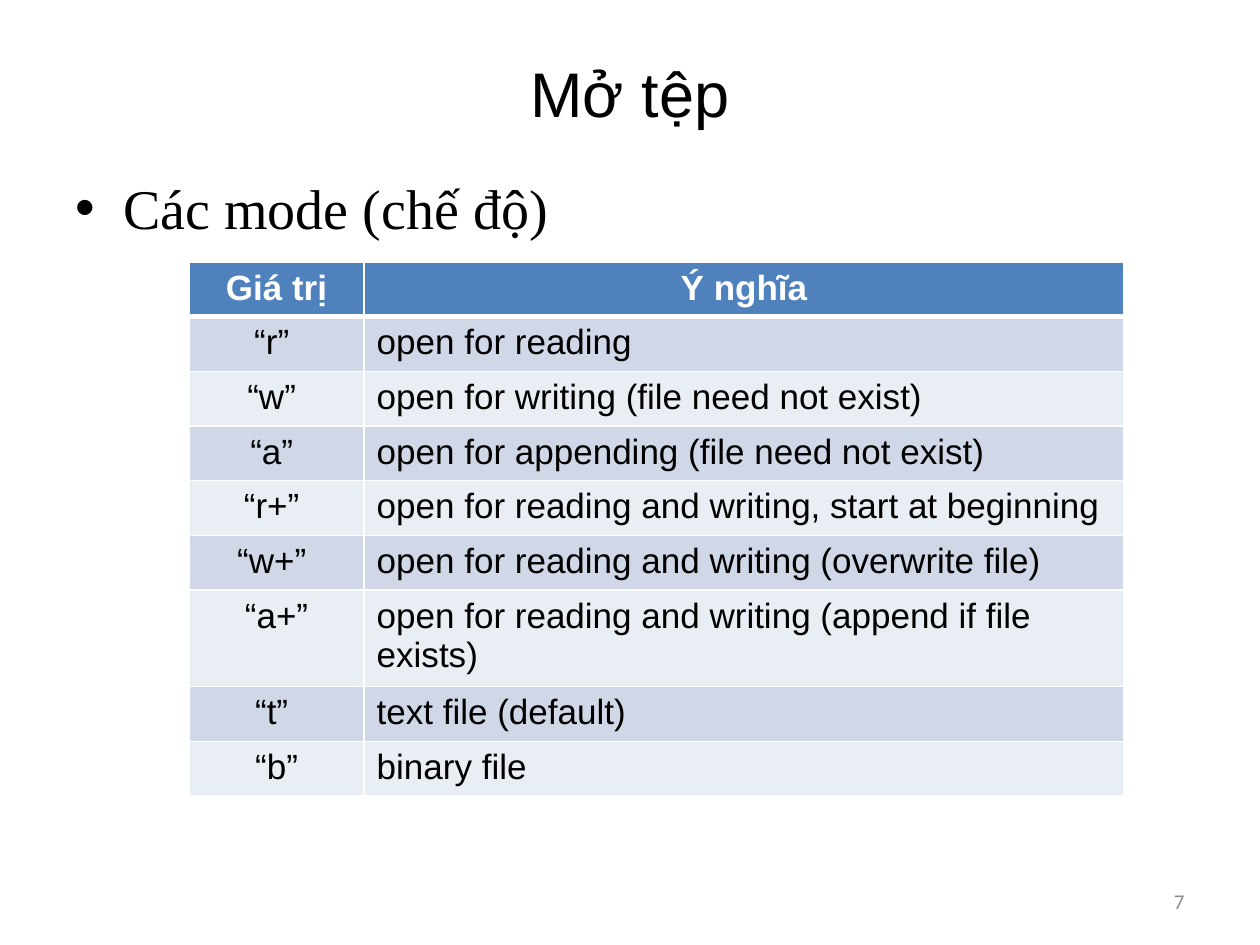
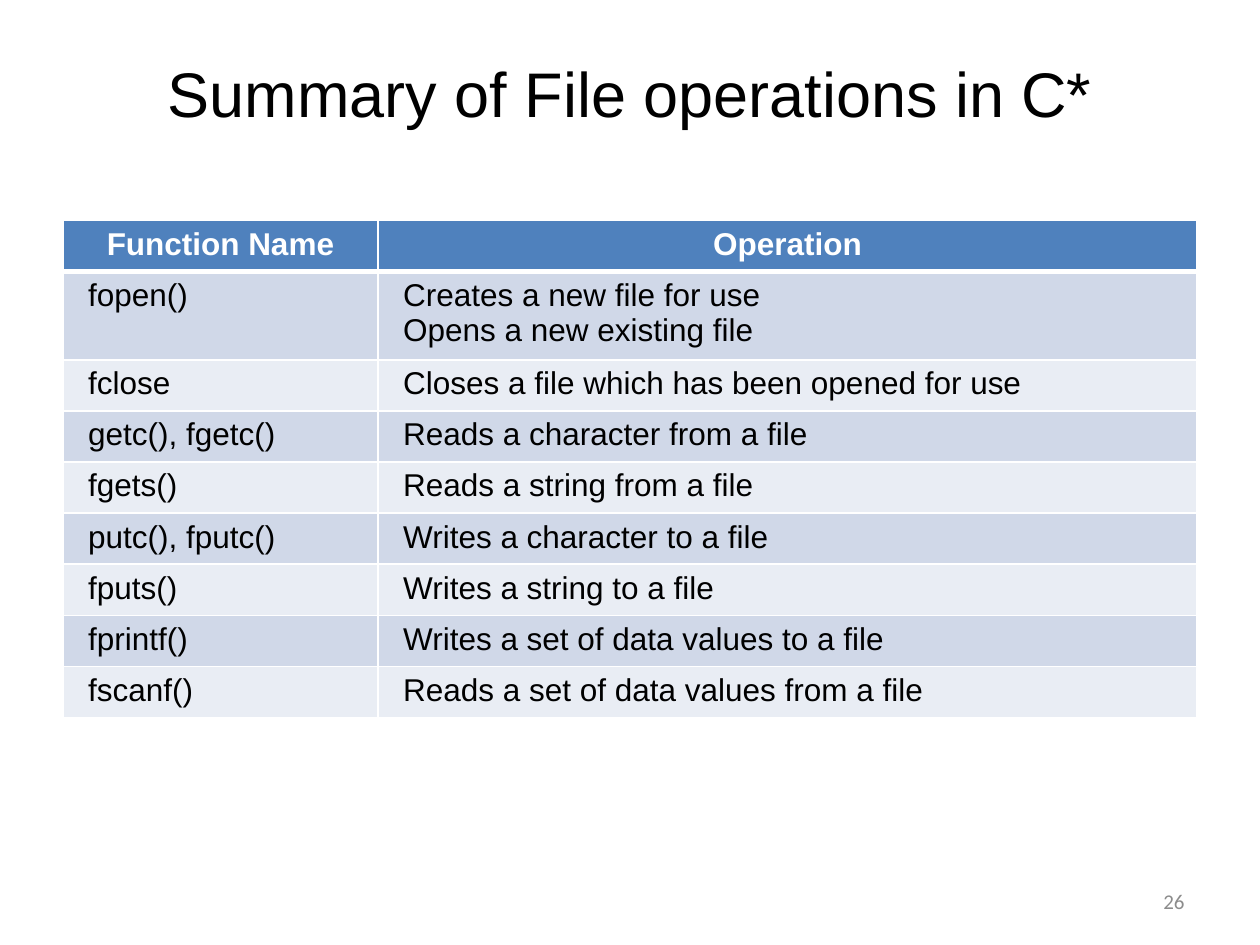
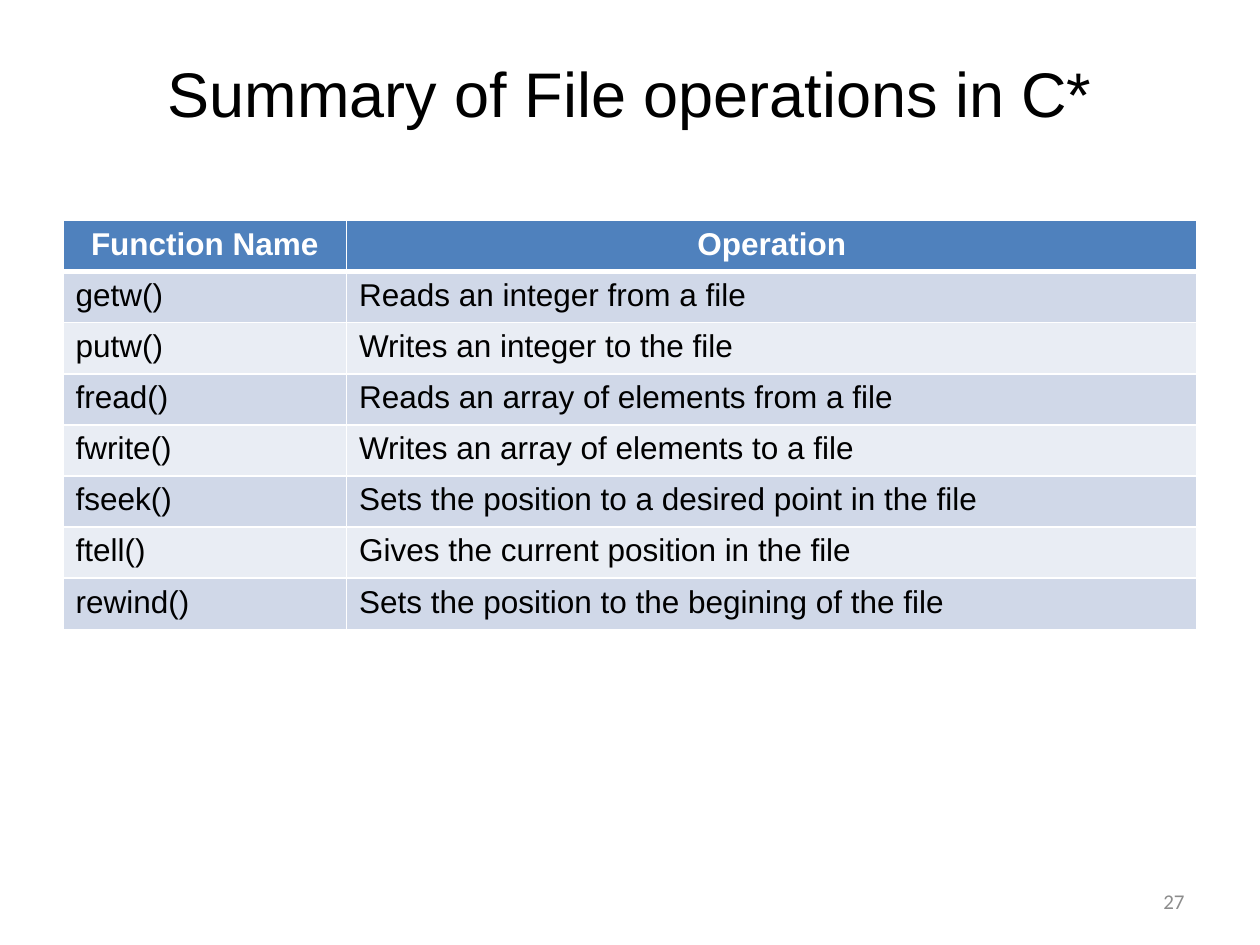
from lxml.etree import SubElement
from pptx import Presentation
from pptx.dml.color import RGBColor
from pptx.enum.text import MSO_ANCHOR, PP_ALIGN
from pptx.oxml.ns import qn
from pptx.util import Inches, Pt

# Content
SUMMARY_TITLE = "Summary of File operations in C*"
SUMMARY_HEADER = ("Function Name", "Operation")

MODES = [
    ("Giá trị", "Ý nghĩa"),
    ("“r” ", "open for reading"),
    ("“w” ", "open for writing (file need not exist)"),
    ("“a” ", "open for appending (file need not exist)"),
    ("“r+” ", "open for reading and writing, start at beginning"),
    ("“w+” ", "open for reading and writing (overwrite file)"),
    ("“a+”", "open for reading and writing (append if file exists)"),
    ("“t” ", "text file (default)"),
    ("“b”", "binary file"),
]
BASIC_FUNCTIONS = [
    SUMMARY_HEADER,
    ("fopen()", "Creates a new file for use\vOpens a new existing file"),
    ("fclose", "Closes a file which has been opened for use"),
    ("getc(), fgetc()", "Reads a character from a file"),
    ("fgets()", "Reads a string from a file"),
    ("putc(), fputc()", "Writes a character to a file"),
    ("fputs()", "Writes a string to a file"),
    ("fprintf()", "Writes a set of data values to a file"),
    ("fscanf()", "Reads a set of data values from a file"),
]
OTHER_FUNCTIONS = [
    SUMMARY_HEADER,
    ("getw()", "Reads an integer from a file"),
    ("putw()", "Writes an integer to the file"),
    ("fread()", "Reads an array of elements from a file"),
    ("fwrite()", "Writes an array of elements to a file"),
    ("fseek()", "Sets the position to a desired point in the file"),
    ("ftell()", "Gives the current position in the file"),
    ("rewind()", "Sets the position to the begining of the file"),
]
SLIDES = [
    {"title": "Mở tệp", "number": 7, "bullet": "Các mode (chế độ)",
     "rows": MODES, "corner": (1.5, 2.08), "widths": (1.39, 6.03),
     "size": 20, "margin": 0.1, "key_align": PP_ALIGN.CENTER},
    {"title": SUMMARY_TITLE, "number": 26,
     "rows": BASIC_FUNCTIONS, "corner": (0.5, 1.75), "widths": (2.5, 6.5),
     "size": 18, "margin": 0.2, "key_align": PP_ALIGN.LEFT},
    {"title": SUMMARY_TITLE, "number": 27,
     "rows": OTHER_FUNCTIONS, "corner": (0.5, 1.75), "widths": (2.25, 6.75),
     "size": 18, "margin": 0.1, "key_align": PP_ALIGN.LEFT},
]

# Shared style
BLACK, WHITE, GRAY = "000000", "FFFFFF", "8C8C8C"
HEADER_FILL = "4F81BD"
BAND_FILLS = ("E9EDF4", "D0D8E8")
ROW_HEIGHT = Inches(3.65 / 9)
TITLE_AREA = (0.5, 0.3, 9, 0.87)
BODY_AREA = (0.5, 1.33, 9, 5.5)
NUMBER_AREA = (7.17, 6.95, 2.33, 0.4)


def color(code):
    return RGBColor.from_string(code)


def style_text(frame, size, font, code, align, bold=False):
    for para in frame.paragraphs:
        para.alignment = align
        for span in para.runs:
            span.font.size = Pt(size)
            span.font.name = font
            span.font.bold = bold
            span.font.color.rgb = color(code)


def add_text(page, area, text, size, font, code, align, anchor=MSO_ANCHOR.MIDDLE):
    box = page.shapes.add_textbox(*map(Inches, area))
    frame = box.text_frame
    frame.word_wrap = True
    frame.vertical_anchor = anchor
    frame.text = text
    style_text(frame, size, font, code, align)
    return frame.paragraphs[0]


def add_bullet(para):
    properties = para._p.get_or_add_pPr()
    properties.set("marL", str(Inches(0.38)))
    properties.set("indent", str(Inches(-0.38)))
    spacing = SubElement(properties, qn("a:spcBef"))
    SubElement(spacing, qn("a:spcPct"), val="20000")
    SubElement(properties, qn("a:buFont"), typeface="Arial")
    SubElement(properties, qn("a:buChar"), char="•")


def add_borders(cell, top, bottom):
    properties = cell._tc.get_or_add_tcPr()
    for side, width in (("L", 1), ("R", 1), ("T", top), ("B", bottom)):
        line = SubElement(properties, qn("a:ln" + side), w=str(Pt(width)))
        fill = SubElement(line, qn("a:solidFill"))
        SubElement(fill, qn("a:srgbClr"), val=WHITE)


def add_grid(page, rows, corner, widths, size, margin, key_align):
    left, top = map(Inches, corner)
    table = page.shapes.add_table(len(rows), len(widths), left, top,
                                  Inches(sum(widths)), ROW_HEIGHT * len(rows)).table
    for column, width in zip(table.columns, widths):
        column.width = Inches(width)
    for row_index, row in enumerate(rows):
        header = row_index == 0
        table.rows[row_index].height = ROW_HEIGHT
        for column_index, text in enumerate(row):
            cell = table.cell(row_index, column_index)
            cell.margin_left = cell.margin_right = Inches(margin)
            add_borders(cell, top=3 if row_index == 1 else 1, bottom=3 if header else 1)
            cell.fill.solid()
            cell.fill.fore_color.rgb = color(HEADER_FILL if header else BAND_FILLS[row_index % 2])
            cell.text_frame.text = text
            align = PP_ALIGN.CENTER if header else (key_align, PP_ALIGN.LEFT)[column_index]
            style_text(cell.text_frame, size, "Arial", WHITE if header else BLACK, align, header)


def main():
    deck = Presentation()
    deck.slide_width, deck.slide_height = Inches(10), Inches(7.5)
    for content in SLIDES:
        page = deck.slides.add_slide(deck.slide_layouts[6])
        add_text(page, TITLE_AREA, content["title"], 36, "Arial", BLACK, PP_ALIGN.CENTER)
        if "bullet" in content:
            add_bullet(add_text(page, BODY_AREA, content["bullet"], 32, "Times New Roman",
                                BLACK, PP_ALIGN.LEFT, MSO_ANCHOR.TOP))
        add_grid(page, content["rows"], content["corner"], content["widths"],
                 content["size"], content["margin"], content["key_align"])
        add_text(page, NUMBER_AREA, str(content["number"]), 12, "Calibri", GRAY, PP_ALIGN.RIGHT)
    deck.save("out.pptx")


if __name__ == "__main__":
    main()
